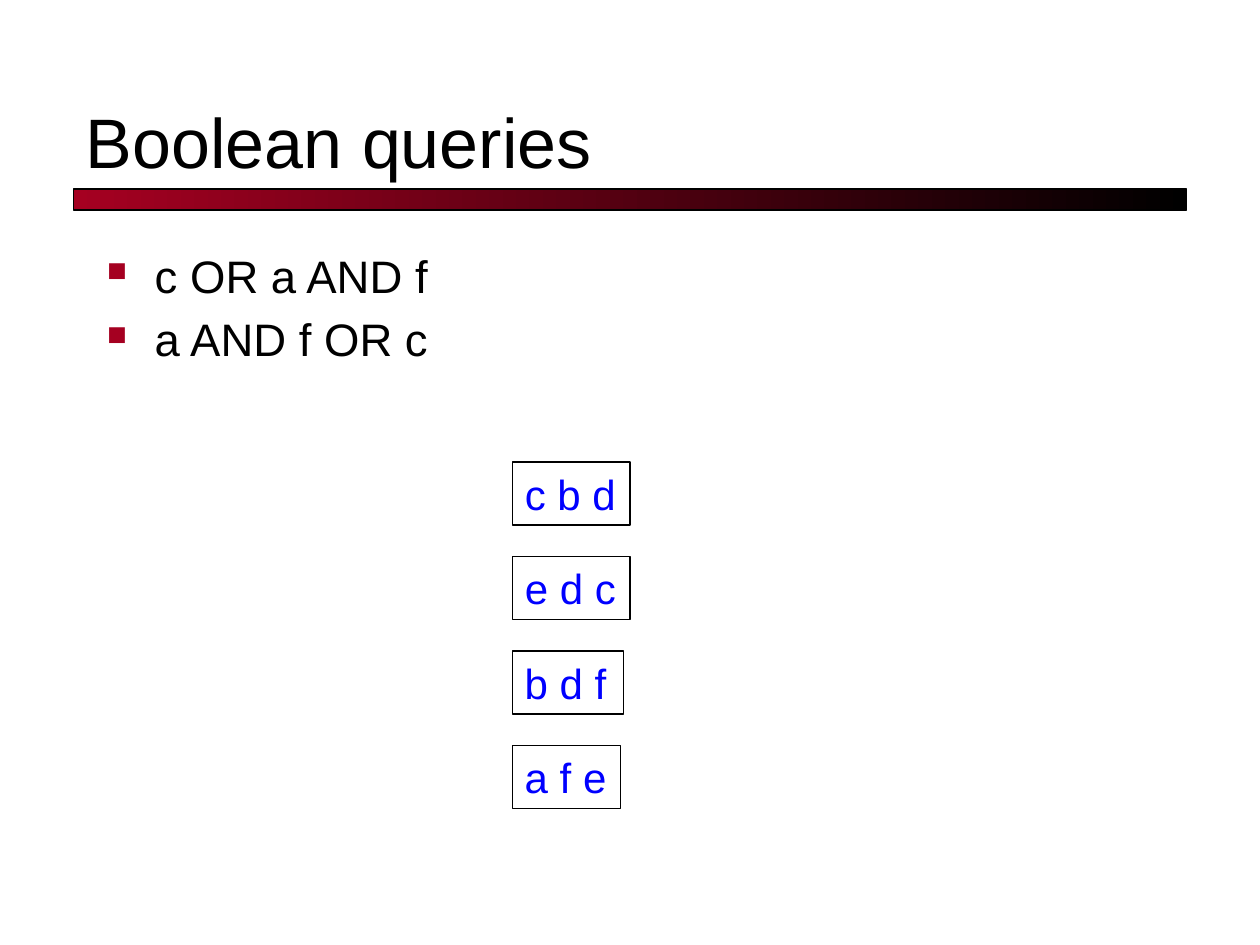
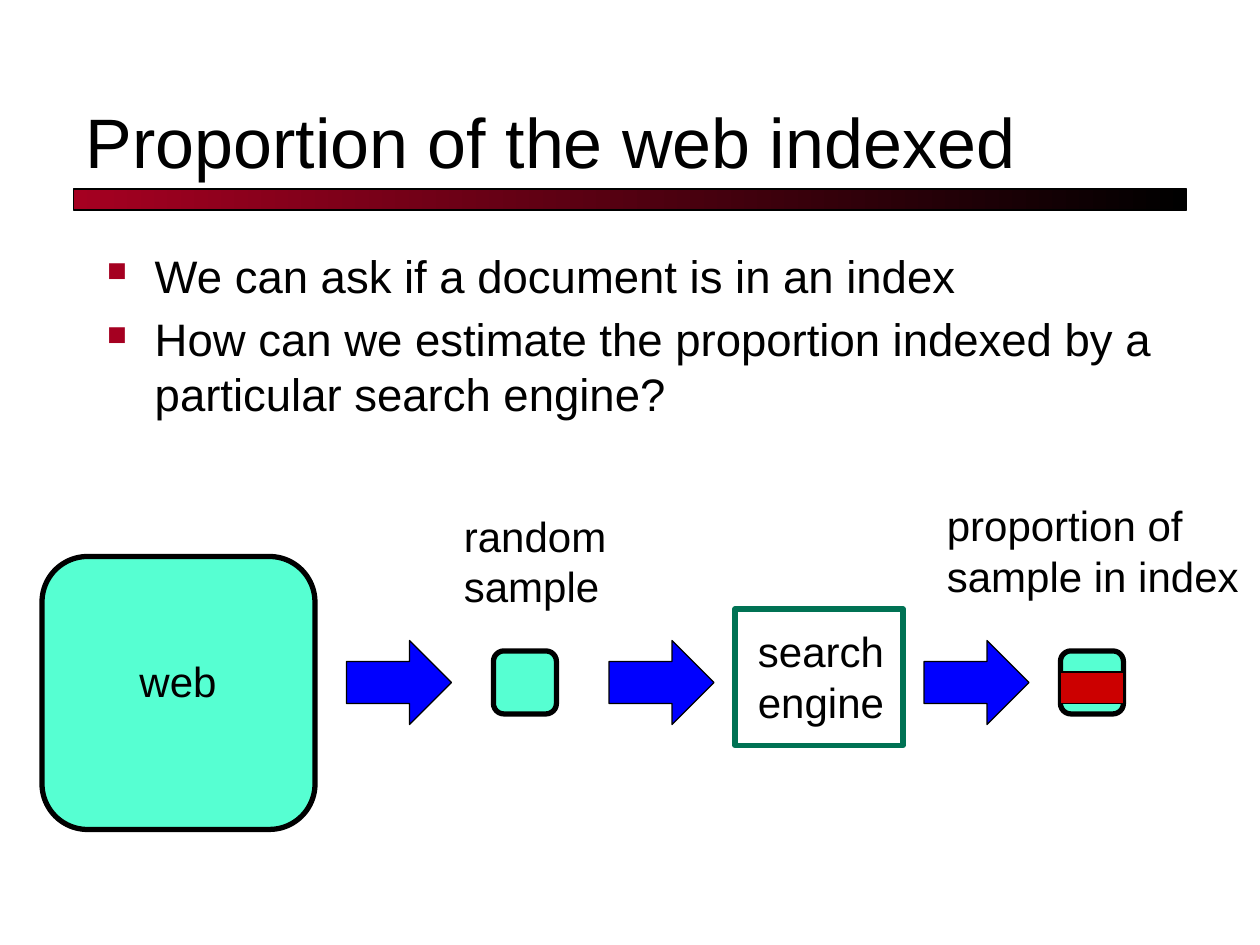
from lxml.etree import SubElement
from pptx import Presentation
from pptx.dml.color import RGBColor
from pptx.enum.shapes import MSO_SHAPE as Preset
from pptx.enum.text import MSO_ANCHOR as Anchor
from pptx.oxml.ns import qn
from pptx.util import Inches, Pt

BLACK = RGBColor(0x00, 0x00, 0x00)
CRIMSON = RGBColor(0xA5, 0x00, 0x21)
BLUE = RGBColor(0x00, 0x00, 0xFF)
MINT = RGBColor(0x56, 0xFF, 0xD2)
GREEN = RGBColor(0x00, 0x72, 0x54)
RED = RGBColor(0xCC, 0x00, 0x00)

FONT = "Arial"
TITLE_SIZE, BODY_SIZE, LABEL_SIZE = 40, 26, 24
COLUMNS, ROWS = 120, 90
CELL = Inches(10) / COLUMNS
INDENT = Inches(0.38)


def cells(*counts):
    return [round(count * CELL) for count in counts]


def write(frame, lines, size, color=BLACK):
    for number, line in enumerate(lines):
        para = frame.paragraphs[0] if number == 0 else frame.add_paragraph()
        para.text = line
        para.font.name = FONT
        para.font.size = Pt(size)
        para.font.color.rgb = color


def add_text(page, area, lines, size=LABEL_SIZE, color=BLACK, wrap=True, anchor=Anchor.TOP):
    box = page.shapes.add_textbox(*cells(*area))
    box.text_frame.word_wrap = wrap
    box.text_frame.vertical_anchor = anchor
    write(box.text_frame, lines, size, color)
    return box


def outline(shape, color=BLACK, weight=0.75):
    shape.line.color.rgb = color
    shape.line.width = Pt(weight)


def add_figure(page, preset, area, fill=None, line=BLACK, weight=0.75):
    shape = page.shapes.add_shape(preset, *cells(*area))
    shape.shadow.inherit = False
    if fill is None:
        shape.fill.background()
    else:
        shape.fill.solid()
        shape.fill.fore_color.rgb = fill
    outline(shape, line, weight)
    return shape


def add_bar(page):
    bar = add_figure(page, Preset.RECTANGLE, (7, 18, 106, 2))
    bar.fill.gradient()
    bar.fill.gradient_angle = 0
    for stop, color in zip(bar.fill.gradient_stops, (CRIMSON, BLACK)):
        stop.color.rgb = color


def set_bullet(para):
    para.space_before = Pt(0.2 * BODY_SIZE)
    props = para._p.get_or_add_pPr()
    props.set("marL", str(INDENT))
    props.set("indent", str(-INDENT))
    marks = [SubElement(props, qn(f"a:{tag}")) for tag in ("buClr", "buSzPct", "buChar")]
    SubElement(marks[0], qn("a:srgbClr")).set("val", str(CRIMSON))
    marks[1].set("val", "60000")
    marks[2].set("char", "■")
    for mark in reversed(marks):
        props.insert(1, mark)


def add_bullets(page, lines, height):
    body = add_text(page, (9, 23, 102, height), lines, BODY_SIZE)
    for para in body.text_frame.paragraphs:
        set_bullet(para)


def add_page(deck, title, bullets, body_height):
    page = deck.slides.add_slide(deck.slide_layouts[6])
    add_bar(page)
    add_text(page, (7, 5, 106, 13), [title], TITLE_SIZE, anchor=Anchor.BOTTOM)
    add_bullets(page, bullets, body_height)
    return page


def add_documents(page):
    documents = [("c b d", 11.2), ("e d c", 11.2), ("b d f", 10.6), ("a f e", 10.3)]
    for row, (words, width) in enumerate(documents):
        card = add_text(page, (48.8, 44 + 9 * row, width, 6), [words], color=BLUE, wrap=False)
        outline(card)


def add_tile(page, left, top, side):
    add_figure(page, Preset.ROUNDED_RECTANGLE, (left, top, side, side), MINT, weight=3)


def add_sampling_flow(page):
    add_tile(page, 4, 53, 26)
    add_text(page, (12.1, 61.8, 10, 6), ["web"], wrap=False)
    for left in (33, 58, 88):
        add_figure(page, Preset.RIGHT_ARROW, (left, 61, 10, 8), BLUE)
    for left in (47, 101):
        add_tile(page, left, 62, 6)
    add_text(page, (43, 48, 16.1, 11), ["random", "sample"], wrap=False)
    add_figure(page, Preset.RECTANGLE, (70, 58, 16, 13), line=GREEN, weight=3)
    add_text(page, (71, 59, 14.5, 11), ["search\vengine"], wrap=False)
    add_figure(page, Preset.RECTANGLE, (101, 64, 6, 3), RED)
    add_text(page, (89, 47, 31, 11), ["proportion of", "sample in index"])


def main():
    deck = Presentation()
    deck.slide_width, deck.slide_height = cells(COLUMNS, ROWS)
    queries = ["c OR a AND f", "a AND f OR c"]
    add_documents(add_page(deck, "Boolean queries", queries, 15))
    questions = [
        "We can ask if a document is in an index",
        "How can we estimate the proportion indexed by a particular search engine?",
    ]
    add_sampling_flow(add_page(deck, "Proportion of the web indexed", questions, 21))
    deck.save("out.pptx")


if __name__ == "__main__":
    main()
